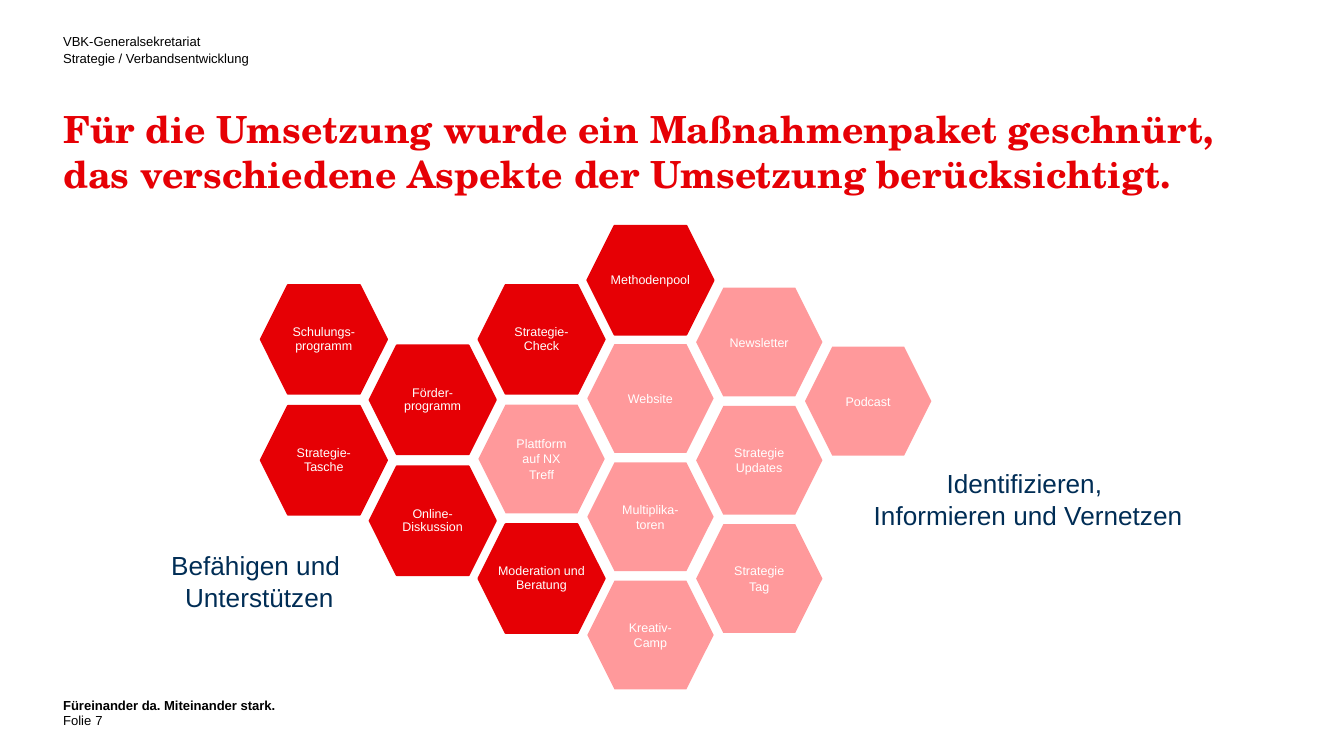
"""Build a slide with a honeycomb of measures grouped into two fields of action."""
from dataclasses import dataclass

from lxml import etree
from pptx import Presentation
from pptx.dml.color import RGBColor
from pptx.enum.shapes import MSO_SHAPE
from pptx.enum.text import MSO_ANCHOR, PP_ALIGN
from pptx.oxml.ns import qn
from pptx.util import Inches, Pt

HEXAGON = MSO_SHAPE.HEXAGON
TOP, MIDDLE, BOTTOM = MSO_ANCHOR.TOP, MSO_ANCHOR.MIDDLE, MSO_ANCHOR.BOTTOM
LEFT, CENTER = PP_ALIGN.LEFT, PP_ALIGN.CENTER


@dataclass(frozen=True)
class Theme:
    red: str = "E60005"
    rose: str = "FF8F91"
    rose_opacity: int = 90
    navy: str = "002D55"
    black: str = "000000"
    white: str = "FFFFFF"
    body_font: str = "Arial"
    title_font: str = "TeX Gyre Schola"
    small: float = 7
    label: float = 6.75
    group: float = 14
    title: float = 20


THEME = Theme()
SLIDE_WIDTH = 10
SLIDE_HEIGHT = SLIDE_WIDTH * 9 / 16
MARGIN = 0.47
CONTENT_WIDTH = SLIDE_WIDTH - 2 * MARGIN

HEADER = ["VBK-Generalsekretariat", "Strategie / Verbandsentwicklung"]
TITLE = ["Für die Umsetzung wurde ein Maßnahmenpaket geschnürt, "
         "das verschiedene Aspekte der Umsetzung berücksichtigt."]
CLAIM = ["Füreinander da. Miteinander stark."]
PAGE_WORD, PAGE_NUMBER = ["Folie"], ["7"]
GROUPS = [
    (["Befähigen und ", "Unterstützen"], 1.93, 4.04),
    (["Identifizieren, ", "Informieren und Vernetzen"], 7.65, 3.43),
]
GROUP_WIDTH, GROUP_HEIGHT = 3, 0.57

ENABLE, CONNECT = "enable", "connect"
HONEYCOMB = [
    (2.12, 0.90, [("Schulungs-programm", ENABLE), ("Strategie-Tasche", ENABLE)]),
    (2.57, 0.90, [("Förder-programm", ENABLE), ("Online-Diskussion", ENABLE)]),
    (2.12, 0.89, [("Strategie-Check", ENABLE), ("Plattform auf NX Treff", CONNECT),
                  ("Moderation und Beratung", ENABLE)]),
    (1.68, 0.88, [("Methodenpool", ENABLE), ("Website", CONNECT),
                  ("Multiplika-toren", CONNECT), ("Kreativ-Camp", CONNECT)]),
    (2.14, 0.88, [("Newsletter", CONNECT), ("Strategie Updates", CONNECT),
                  ("Strategie Tag", CONNECT)]),
    (2.58, 0.88, [("Podcast", CONNECT)]),
]
HONEYCOMB_LEFT, COLUMN_STEP = 1.94, 0.81
CELL_WIDTH, CELL_HEIGHT = 0.94, 0.81
CELL_CORNER = CELL_HEIGHT / 4


def write(shape, lines, size, color, font=THEME.body_font, bold=False,
          align=LEFT, anchor=TOP, spacing=None, insets=None):
    frame = shape.text_frame
    frame.word_wrap = True
    frame.vertical_anchor = anchor
    if insets is not None:
        frame.margin_left = frame.margin_right = Inches(insets[0])
        frame.margin_top = frame.margin_bottom = Inches(insets[1])
    for index, line in enumerate(lines):
        paragraph = frame.add_paragraph() if index else frame.paragraphs[0]
        paragraph.alignment = align
        if spacing is not None:
            paragraph.line_spacing = spacing
        run = paragraph.add_run()
        run.text = line
        run.font.name = font
        run.font.size = Pt(size)
        run.font.bold = bold
        run.font.color.rgb = RGBColor.from_string(color)


def add_text(slide, box, lines, size, color, **options):
    shape = slide.shapes.add_textbox(*map(Inches, box))
    write(shape, lines, size, color, **options)


def add_small_text(slide, box, lines, **options):
    add_text(slide, box, lines, THEME.small, THEME.black,
             spacing=Pt(9), insets=(0, 0), **options)


def fill_solid(shape, color):
    shape.shadow.inherit = False
    shape.fill.solid()
    shape.fill.fore_color.rgb = RGBColor.from_string(color)


def add_enable_cell(slide, left, top, label):
    right, bottom = left + CELL_WIDTH, top + CELL_HEIGHT
    center = top + CELL_HEIGHT / 2
    inner_left, inner_right = left + CELL_CORNER, right - CELL_CORNER
    outline = [(inner_left, top), (inner_right, top), (right, center),
               (inner_right, bottom), (inner_left, bottom)]
    builder = slide.shapes.build_freeform(Inches(left), Inches(center))
    builder.add_line_segments([(Inches(x), Inches(y)) for x, y in outline], close=True)
    cell = builder.convert_to_shape()
    fill_solid(cell, THEME.red)
    cell.line.color.rgb = RGBColor.from_string(THEME.red)
    cell.line.width = Pt(1)
    write(cell, [label], THEME.label, THEME.white, align=CENTER, anchor=MIDDLE,
          spacing=0.9, insets=(0.14, 0.13))


def add_connect_cell(slide, left, top, label):
    box = (left, top, CELL_WIDTH, CELL_HEIGHT)
    cell = slide.shapes.add_shape(HEXAGON, *map(Inches, box))
    fill_solid(cell, THEME.rose)
    color = cell.fill._xPr.find(qn("a:solidFill"))[0]
    etree.SubElement(color, qn("a:alpha")).set("val", str(THEME.rose_opacity * 1000))
    cell.line.fill.background()
    write(cell, [label], THEME.label, THEME.white, align=CENTER, anchor=MIDDLE)


def add_honeycomb(slide):
    draw = {ENABLE: add_enable_cell, CONNECT: add_connect_cell}
    for column, (first_top, pitch, cells) in enumerate(HONEYCOMB):
        left = HONEYCOMB_LEFT + column * COLUMN_STEP
        for row, (label, group) in enumerate(cells):
            draw[group](slide, left, first_top + row * pitch, label)


def main():
    presentation = Presentation()
    presentation.slide_width = Inches(SLIDE_WIDTH)
    presentation.slide_height = Inches(SLIDE_HEIGHT)
    slide = presentation.slides.add_slide(presentation.slide_layouts[6])

    add_small_text(slide, (MARGIN, 0.24, 1.79, 0.37), HEADER)
    add_text(slide, (MARGIN, 0.79, CONTENT_WIDTH, 0.64), TITLE, THEME.title, THEME.red,
             font=THEME.title_font, bold=True, spacing=Pt(24), insets=(0, 0))
    add_honeycomb(slide)
    for lines, center, top in GROUPS:
        box = (center - GROUP_WIDTH / 2, top, GROUP_WIDTH, GROUP_HEIGHT)
        add_text(slide, box, lines, THEME.group, THEME.navy, align=CENTER)
    add_small_text(slide, (MARGIN, 5.18, CONTENT_WIDTH, 0.09), CLAIM, bold=True)
    add_small_text(slide, (MARGIN, 5.29, 0.3, 0.13), PAGE_WORD, anchor=BOTTOM)
    add_small_text(slide, (0.71, 5.3, 2.25, 0.12), PAGE_NUMBER, anchor=BOTTOM)

    presentation.save("out.pptx")


if __name__ == "__main__":
    main()
